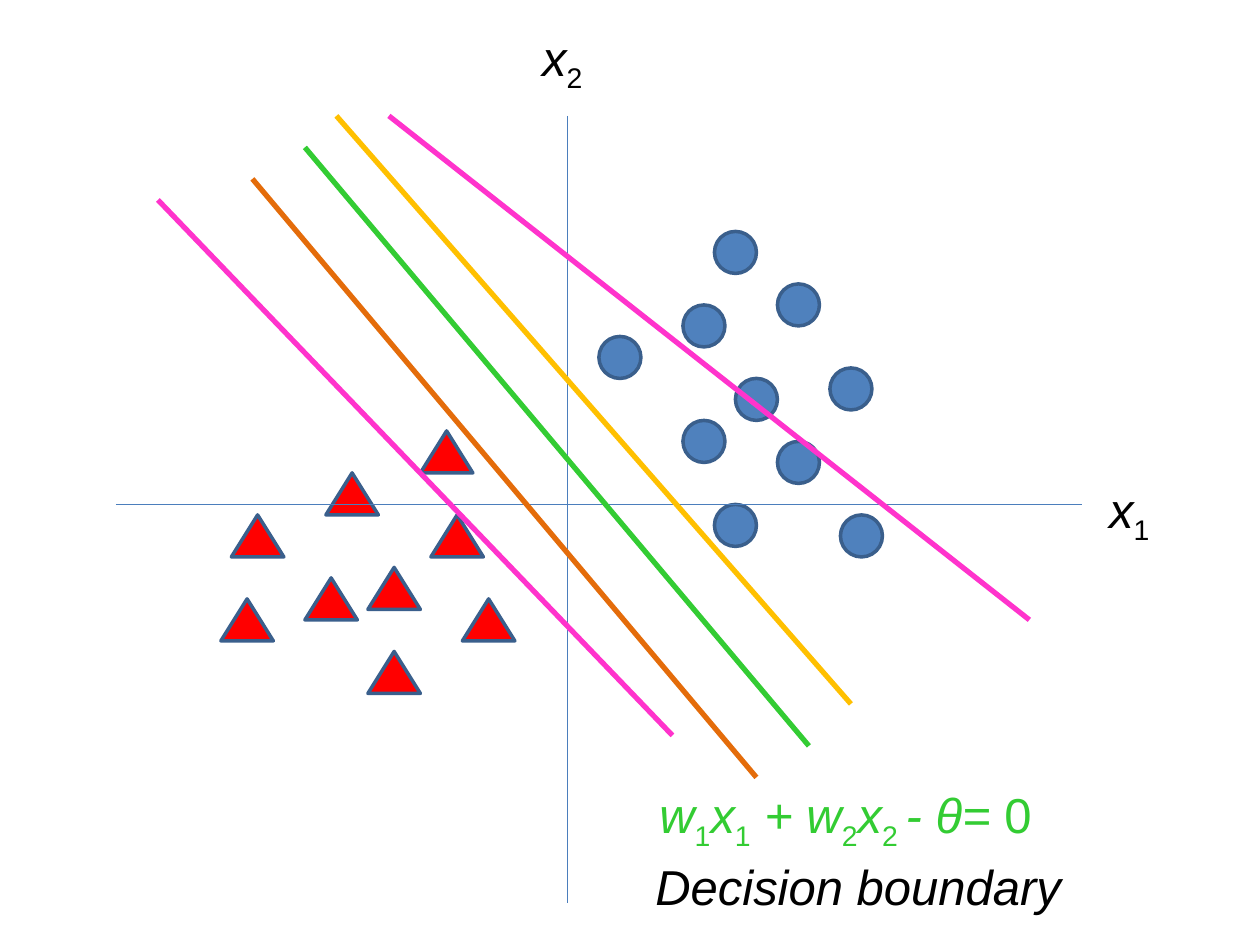
import dataclasses

import pptx
import pptx.dml.color
import pptx.enum.shapes
import pptx.enum.text
import pptx.oxml.ns
import pptx.util
from lxml import etree

Inches = pptx.util.Inches
SHAPE = pptx.enum.shapes.MSO_SHAPE


@dataclasses.dataclass(frozen=True)
class Theme:
    font: str = "Arial"
    size: int = 28
    text: str = "000000"
    axis: str = "4B7EBC"
    outline: str = "3A5F8C"
    circle: str = "4F81BD"
    triangle: str = "FF0000"
    green: str = "33CC33"
    pink: str = "FF33CC"
    orange: str = "E46C0A"
    yellow: str = "FFC000"
    axis_width: float = 0.75
    outline_width: float = 2
    boundary_width: float = 3


THEME = Theme()
GRID = 1 / 12  # all plot positions sit on a grid of twelfths of an inch
ORIGIN = (43, 46)  # crossing of the axes, in grid steps from the plot corner

# Left and top of each marker, in grid steps from the crossing of the axes
CIRCLES = [(11, -19), (20, -21), (26, 1), (25, -13), (14, 0),
           (3, -16), (14, -26), (20, -6), (11, -8), (16, -12)]
TRIANGLES = [(-25, 7), (-19, 6), (-10, 9), (-14, -7), (-32, 1),
             (-13, 1), (-23, -3), (-33, 9), (-19, 14)]

# Start and end in grid steps, then colour
AXES = [(-43, 0, 49, 0), (0, -37, 0, 38)]
BOUNDARIES = [(-25, -34, 23, 23, THEME.green),
              (-17, -37, 44, 11, THEME.pink),
              (-39, -29, 10, 22, THEME.pink),
              (-30, -31, 18, 26, THEME.orange),
              (-22, -37, 27, 19, THEME.yellow)]

# Runs: text, style ("i" italic, "n" upright, "sub" subscript)
EQUATION = [("w", "i"), ("1", "sub"), ("x", "i"), ("1", "sub"),
            (" + w", "i"), ("2", "sub"), ("x", "i"), ("2 ", "sub"),
            ("- θ= ", "i"), ("0", "n")]


def rgb(value):
    return pptx.dml.color.RGBColor.from_string(value)


def plot_point(box, x, y):
    """Slide position of a grid point in the plot box."""
    return (Inches(box[0] + (ORIGIN[0] + x) * GRID),
            Inches(box[1] + (ORIGIN[1] + y) * GRID))


def add_line(slide, box, x1, y1, x2, y2, color, width):
    line = slide.shapes.add_connector(
        pptx.enum.shapes.MSO_CONNECTOR.STRAIGHT,
        *plot_point(box, x1, y1), *plot_point(box, x2, y2))
    line.line.color.rgb = rgb(color)
    line.line.width = pptx.util.Pt(width)
    etree.SubElement(line._element.spPr, pptx.oxml.ns.qn("a:effectLst"))


def add_markers(slide, box, kind, points, width, color):
    for x, y in points:
        sp = slide.shapes.add_shape(kind, *plot_point(box, x, y),
                                    Inches(width * GRID), Inches(4 * GRID))
        sp.shadow.inherit = False
        sp.fill.solid()
        sp.fill.fore_color.rgb = rgb(color)
        sp.line.color.rgb = rgb(THEME.outline)
        sp.line.width = pptx.util.Pt(THEME.outline_width)


def add_text(slide, left, top, width, runs, color=THEME.text, wrap=True):
    sp = slide.shapes.add_textbox(left, top, width, Inches(0.57))
    tf = sp.text_frame
    tf.word_wrap = wrap
    tf.auto_size = pptx.enum.text.MSO_AUTO_SIZE.SHAPE_TO_FIT_TEXT
    p = tf.paragraphs[0]
    p.alignment = pptx.enum.text.PP_ALIGN.CENTER
    for text, style in runs:
        r = p.add_run()
        r.text = text
        r.font.name = THEME.font
        r.font.size = pptx.util.Pt(THEME.size)
        r.font.color.rgb = rgb(color)
        r.font.italic = style == "i"
        if style == "sub":
            r.font._element.set("baseline", "-25000")


def add_plot(slide, box):
    # Markers of the two classes
    add_markers(slide, box, SHAPE.OVAL, CIRCLES, 4, THEME.circle)
    add_markers(slide, box, SHAPE.ISOSCELES_TRIANGLE, TRIANGLES, 5,
                THEME.triangle)
    # Axes and their names
    for ends in AXES:
        add_line(slide, box, *ends, THEME.axis, THEME.axis_width)
    for index, x, y in [("1", 50, -3), ("2", -4, -46)]:
        add_text(slide, *plot_point(box, x, y), Inches(7 * GRID),
                 [("x", "i"), (index, "sub")])
    # Candidate decision boundaries
    for *ends, color in BOUNDARIES:
        add_line(slide, box, *ends, color, THEME.boundary_width)


def add_caption(slide, box):
    left, top, width = box
    add_text(slide, Inches(left), Inches(top), Inches(width), EQUATION,
             THEME.green)
    add_text(slide, Inches(left + 0.33), Inches(top + 0.57),
             Inches(width - 0.46), [("Decision boundary", "i")], wrap=False)


def main():
    prs = pptx.Presentation()
    prs.slide_width, prs.slide_height = Inches(10), Inches(7.5)
    slide = prs.slides.add_slide(prs.slide_layouts[6])
    add_plot(slide, (0.92, 0.17))
    add_caption(slide, (4.75, 6.18, 3.92))
    prs.save("out.pptx")


if __name__ == "__main__":
    main()
